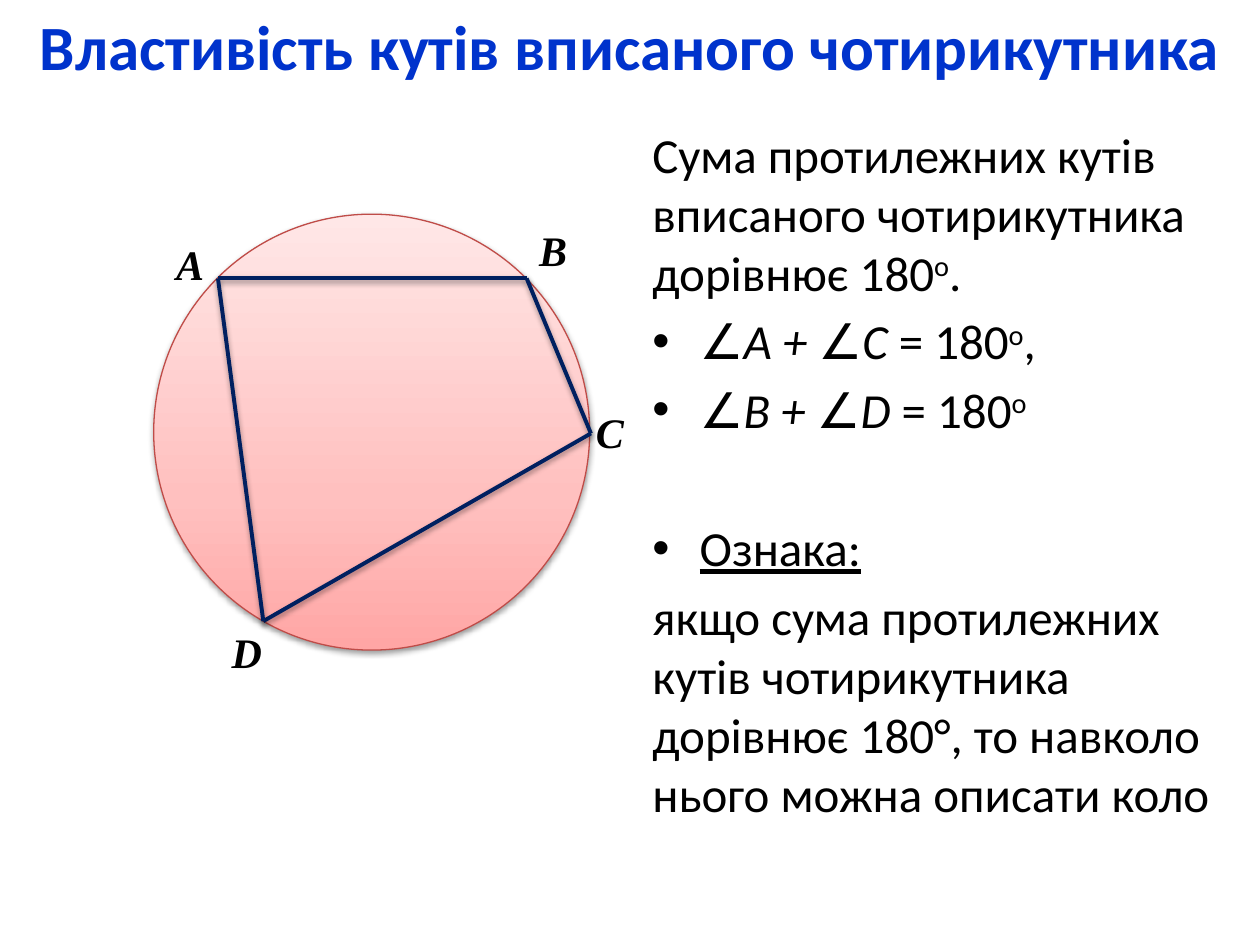
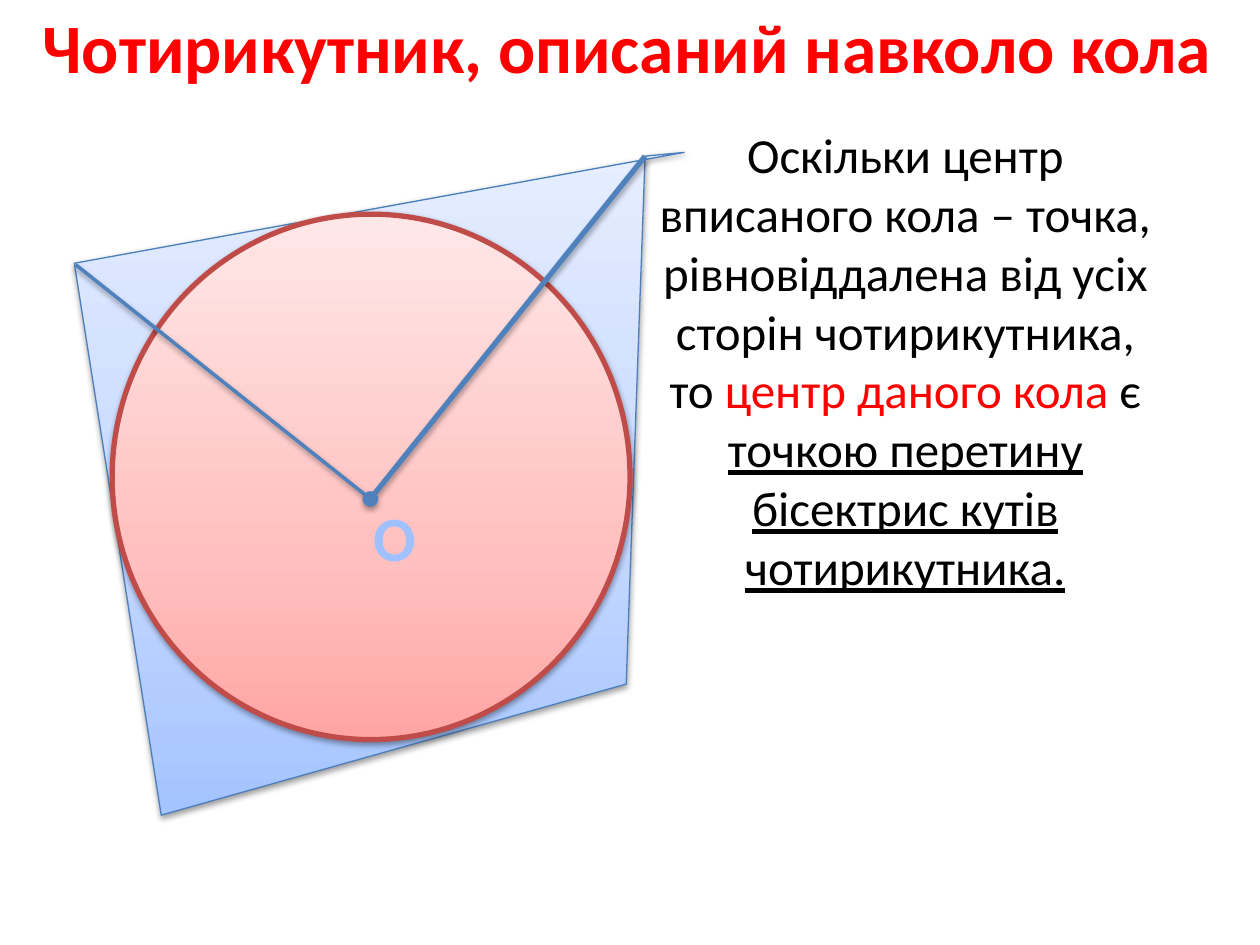
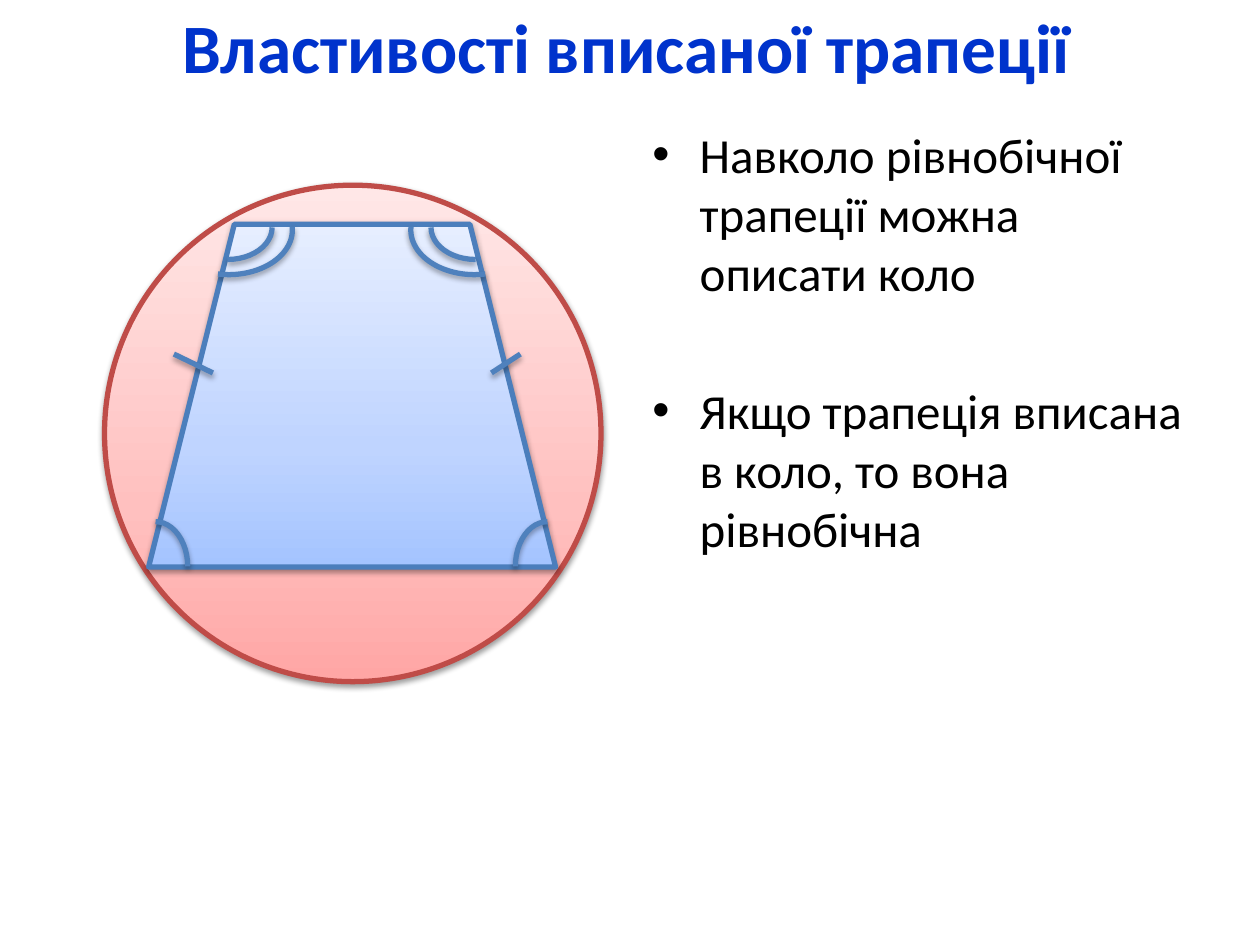
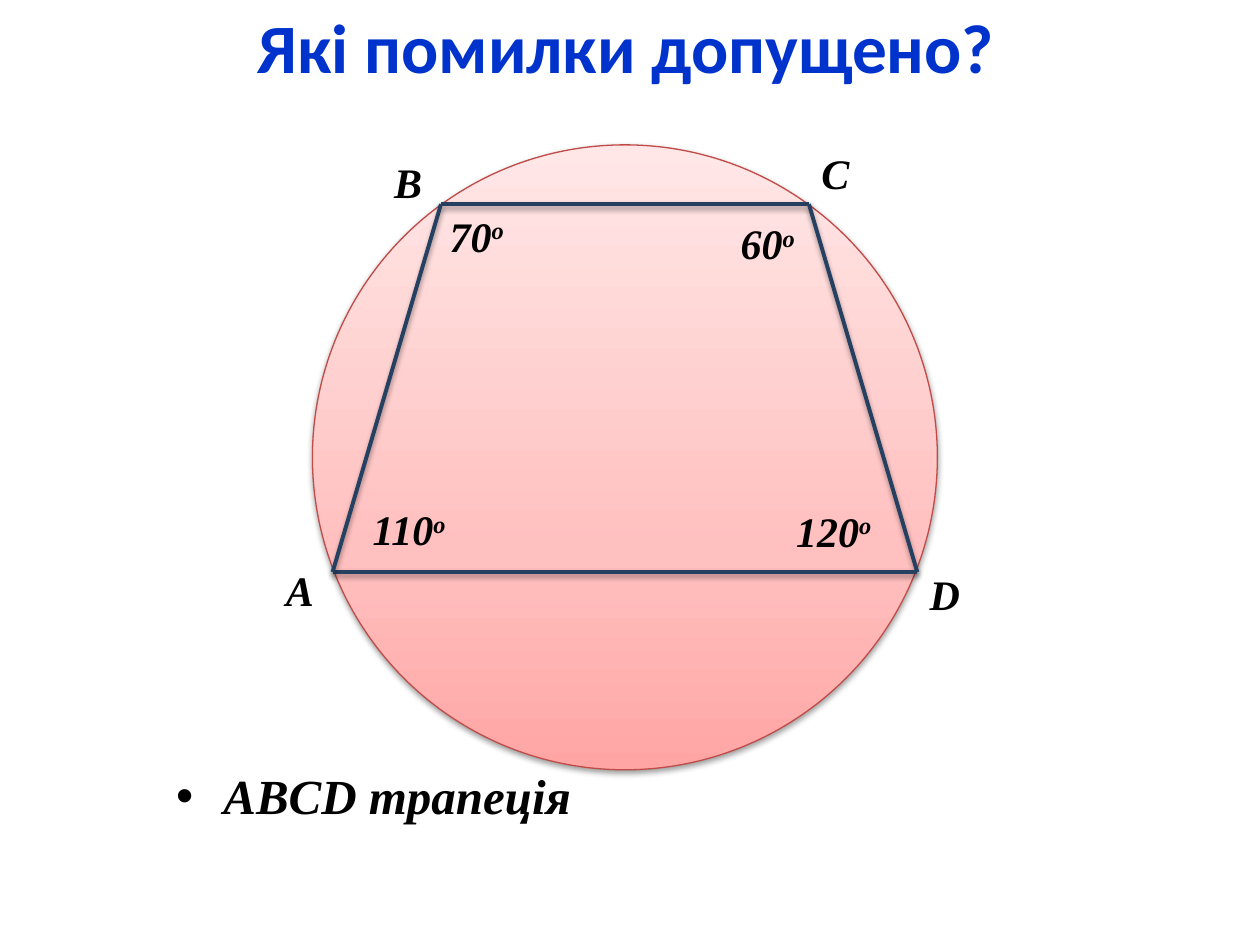
from dataclasses import dataclass

from pptx import Presentation, util as u
from pptx.dml.color import RGBColor
from pptx.enum import shapes, text
from pptx.oxml import parse_xml
from pptx.oxml.ns import nsdecls, qn

PX = 9144  # EMU in one px, 100 px to the inch


@dataclass(frozen=True)
class Theme:
    blue_title: str = "0033CC"
    red: str = "FF0000"
    ink: str = "000000"
    navy: str = "002060"
    slate: str = "254061"
    accent: str = "4F81BD"
    blue_edge: str = "4B7EBC"
    red_edge: str = "BF4C48"
    letter_edge: str = "467AB8"
    pink: tuple = ((0, "FFA6A5"), (35, "FFC0BF"), (100, "FFE7E7"))
    sky: tuple = ((0, "A4C4FF"), (35, "BFD4FF"), (100, "E6EEFF"))
    letter: tuple = ((0, "BFD3F9"), (9, "A0C1FF"), (50, "003D85"),
                     (79, "A0C1FF"), (100, "BFD3F9"))
    sans: str = "Calibri"
    serif: str = "Times New Roman"
    long_title_size: float = 36
    title_size: float = 39.6
    body_size: float = 28
    label_size: float = 24
    center_size: float = 36
    para_gap: float = 5.6
    section_gap: float = 45.4
    thin: float = 0.75
    medium: float = 2
    chord: float = 2.25
    thick: float = 3


THEME = Theme()
UNDERLINE = {"underline": True}
ITALIC = {"italic": True}
SUPER = {"raised": True}
SERIF = {"name": THEME.serif, "bold": True, "italic": True}


def px(*lengths):
    return [u.Emu(length * PX) for length in lengths]


def inside(box, left, top, *size):
    """Move a part, given from the corner of its box, onto the slide."""
    return (box[0] + left, box[1] + top, *size)


# ---- Paint ----

def gradient(stops, angle):
    marks = "".join(f'<a:gs pos="{at * 1000}"><a:srgbClr val="{color}"/></a:gs>'
                    for at, color in stops)
    return parse_xml(f'<a:gradFill {nsdecls("a")} rotWithShape="1"><a:gsLst>{marks}'
                     f'</a:gsLst><a:lin ang="{angle * 60000}" scaled="0"/></a:gradFill>')


def set_line(item, color, width):
    item.line.color.rgb = RGBColor.from_string(color)
    item.line.width = u.Pt(width)


def set_shadow(item, alpha=None, distance=20000):
    """Give a soft shadow below, or none when alpha is left out."""
    shadow = "" if alpha is None else (
        f'<a:outerShdw blurRad="40000" dist="{distance}" dir="5400000" rotWithShape="0">'
        f'<a:srgbClr val="{THEME.ink}"><a:alpha val="{alpha * 1000}"/></a:srgbClr>'
        '</a:outerShdw>')
    item._element.spPr.append(
        parse_xml(f'<a:effectLst {nsdecls("a")}>{shadow}</a:effectLst>'))


def paint(shape, stops, edge, width):
    shape._element.spPr.append(gradient(stops, 270))
    set_line(shape, edge, width)
    set_shadow(shape, 38)


def add_circle(page, box, width):
    circle = page.shapes.add_shape(shapes.MSO_SHAPE.OVAL, *px(*box))
    paint(circle, THEME.pink, THEME.red_edge, width)


def add_line(owner, box, start, end, color, width):
    line = owner.shapes.add_connector(
        shapes.MSO_CONNECTOR.STRAIGHT, *px(*inside(box, *start), *inside(box, *end)))
    set_line(line, color, width)
    return line


# ---- Text ----

def add_span(para, words, size, name=THEME.sans, color=THEME.ink, raised=False, **looks):
    span = para.add_run()
    span.text = words
    span.font.name, span.font.size = name, u.Pt(size)
    span.font.color.rgb = RGBColor.from_string(color)
    for look, value in looks.items():
        setattr(span.font, look, value)
    if raised:
        span._r.get_or_add_rPr().set("baseline", "30000")
    return span


def add_frame(page, box):
    frame = page.shapes.add_textbox(*px(*box)).text_frame
    frame.word_wrap = True
    return frame


def add_bullet(para):
    props = para._p.get_or_add_pPr()
    props.set("marL", "342900")
    props.set("indent", "-342900")
    props.append(parse_xml(f'<a:buFont {nsdecls("a")} typeface="Arial"/>'))
    props.append(parse_xml(f'<a:buChar {nsdecls("a")} char="•"/>'))


def add_title(page, box, words, size=THEME.title_size, color=THEME.blue_title):
    frame = add_frame(page, box)
    frame.vertical_anchor = text.MSO_ANCHOR.MIDDLE
    para = frame.paragraphs[0]
    para.alignment = text.PP_ALIGN.CENTER
    add_span(para, words, size, color=color, bold=True)


def add_body(page, box, paras, align=text.PP_ALIGN.LEFT):
    """Each paragraph is (bulleted, space before, [(words, looks), ...])."""
    frame = add_frame(page, box)
    for index, (bulleted, before, spans) in enumerate(paras):
        para = frame.add_paragraph() if index else frame.paragraphs[0]
        if bulleted:
            add_bullet(para)
        para.alignment = align
        para.space_before = u.Pt(before)
        for words, looks in spans:
            add_span(para, words, THEME.body_size, **looks)


def add_label(page, box, words, degrees=False):
    para = add_frame(page, box).paragraphs[0]
    add_span(para, words, THEME.label_size, **SERIF)
    if degrees:
        add_span(para, "o", THEME.label_size, raised=True, **SERIF)


# ---- Figures ----

def inscribed_figure(page, box, corners, color, labels, label_width, angles=()):
    """Circle with a closed run of chords, corner letters and angle values."""
    add_circle(page, box, THEME.thin)
    for start, end in zip(corners, corners[1:] + corners[:1]):
        add_line(page, box, start, end, color, THEME.chord)
    for words, left, top in labels:
        add_label(page, inside(box, left, top, label_width, 50), words)
    for words, left, top in angles:
        add_label(page, inside(box, left, top, 88, 50), words, degrees=True)


def circumscribed_figure(page, box):
    """Quadrilateral around a circle, with two bisectors meeting at the centre."""
    corners = [inside(box, *corner) for corner in
               ((484, 0), (0, 88), (69, 526), (438, 422), (453, 3))]
    builder = page.shapes.build_freeform(*corners[0], scale=PX)
    builder.add_line_segments(corners[1:], close=True)
    paint(builder.convert_to_shape(), THEME.sky, THEME.blue_edge, THEME.thin)
    add_circle(page, inside(box, 30, 49, 411, 417), THEME.thick)

    # Bisectors
    center = (235, 275)
    group = page.shapes.add_group_shape()
    short = add_line(group, box, (1, 89), center, THEME.accent, THEME.medium)
    set_shadow(short, 38)
    long = add_line(group, box, (453, 3), center, THEME.accent, THEME.thick)
    long.line._get_or_add_ln().append(parse_xml(f'<a:tailEnd {nsdecls("a")} type="oval"/>'))
    set_shadow(long, 35, 23000)

    # Centre letter with an outline and a gradient
    para = add_frame(page, inside(box, 228, 270, 36, 71)).paragraphs[0]
    para.alignment = text.PP_ALIGN.CENTER
    props = add_span(para, "О", THEME.center_size, bold=True)._r.get_or_add_rPr()
    props.replace(props.find(qn("a:solidFill")), gradient(THEME.letter, 90))
    props.insert(0, parse_xml(
        f'<a:ln {nsdecls("a")} w="10541"><a:solidFill>'
        f'<a:srgbClr val="{THEME.letter_edge}"/></a:solidFill></a:ln>'))


def add_arc(owner, box, turn=0, flipped=False, sweep=None):
    arc = owner.shapes.add_shape(shapes.MSO_SHAPE.ARC, *px(*box))
    if sweep:
        for index, degrees in enumerate(sweep):
            arc.adjustments[index] = degrees * 0.6
    arc.rotation = turn
    if flipped:
        arc._element.spPr.find(qn("a:xfrm")).set("flipH", "1")
    arc.fill.background()
    set_line(arc, THEME.accent, THEME.thick)
    set_shadow(arc, 35, 23000)


def trapezoid_figure(page, box):
    """Isosceles trapezoid in a circle, with marks of equal sides and angles."""
    add_circle(page, box, THEME.thick)
    trapezoid = page.shapes.add_shape(
        shapes.MSO_SHAPE.TRAPEZOID, *px(*inside(box, 35, 31, 323, 272)))
    paint(trapezoid, THEME.sky, THEME.blue_edge, THEME.thick)

    # Equal sides
    for start, end in (((55, 134), (86, 149)), ((330, 134), (307, 149))):
        tick = add_line(page, box, start, end, THEME.accent, THEME.thick)
        set_shadow(tick, 35, 23000)

    # Equal angles, mirrored about the axis of the trapezoid
    axis = 196

    def side(left, top, width, height, flipped):
        return inside(box, 2 * axis - left - width if flipped else left,
                      top, width, height)

    for flipped in (False, True):
        add_arc(page, side(15, 267, 51, 71, flipped), flipped=flipped)
    for flipped, turn in ((False, 90), (True, 270)):
        pair = page.shapes.add_group_shape()
        add_arc(pair, side(72, -2, 51, 71, flipped), turn, flipped)
        add_arc(pair, side(63, -15, 71, 101, flipped), turn, flipped, (267, 13.75))


# ---- Slides ----

def angle_property(page):
    add_title(page, (0, 0, 1000, 72), "Властивість кутів вписаного чотирикутника",
              THEME.long_title_size)
    add_body(page, (508, 94, 480, 576), [
        (False, 0, [("Сума протилежних кутів вписаного чотирикутника дорівнює 180", {}),
                    ("о", SUPER), (".", {})]),
        (True, THEME.para_gap, [("∠A + ∠C ", ITALIC), ("= 180", {}), ("o", SUPER), (",", {})]),
        (True, THEME.para_gap, [("∠B + ∠D ", ITALIC), ("= 180", {}), ("o", SUPER)]),
        (True, THEME.section_gap, [("Ознака:", UNDERLINE)]),
        (False, THEME.para_gap, [("якщо сума протилежних кутів чотирикутника дорівнює "
                                  "180°, то навколо нього можна описати коло", {})]),
    ])
    inscribed_figure(
        page, (122, 170, 346, 346), [(51, 51), (296, 51), (347, 174), (87, 323)], THEME.navy,
        [("А", 8, 14), ("В", 296, 3), ("С", 341, 148), ("D", 52, 322)], 31)


def circumscribed(page):
    add_title(page, (0, 0, 996, 72), "Чотирикутник, описаний навколо кола", color=THEME.red)
    add_body(page, (508, 94, 421, 576), [
        (False, 0, [("Оскільки центр вписаного кола – точка, рівновіддалена від усіх "
                     "сторін чотирикутника, то ", {}),
                    ("центр даного кола ", {"color": THEME.red}), ("є ", {}),
                    ("точкою перетину бісектрис кутів чотирикутника.", UNDERLINE)]),
    ], text.PP_ALIGN.CENTER)
    circumscribed_figure(page, (59, 121, 484, 526))


def inscribed_trapezoid(page):
    add_title(page, (47, 0, 900, 72), "Властивості вписаної трапеції")
    add_body(page, (508, 94, 441, 576), [
        (True, 0, [("Навколо рівнобічної трапеції можна описати коло", {})]),
        (True, THEME.section_gap,
         [("Якщо трапеція вписана в коло, то вона рівнобічна", {})]),
    ])
    trapezoid_figure(page, (83, 147, 394, 394))


def find_mistakes(page):
    add_title(page, (47, 0, 900, 72), "Які помилки допущено?")
    inscribed_figure(
        page, (248, 115, 496, 496), [(102, 47), (394, 47), (480, 339), (16, 339)], THEME.slate,
        [("А", -31, 328), ("В", 55, 4), ("С", 394, -3), ("D", 480, 331)], 47,
        [("110", 38, 280), ("70", 99, 47), ("120", 374, 281), ("60", 330, 53)])
    add_body(page, (130, 603, 819, 67), [(True, 0, [("ABCD трапеція", SERIF)])])


def main():
    deck = Presentation()
    deck.slide_width, deck.slide_height = px(1000, 750)
    for build in (angle_property, circumscribed, inscribed_trapezoid, find_mistakes):
        build(deck.slides.add_slide(deck.slide_layouts[6]))
    deck.save("out.pptx")


if __name__ == "__main__":
    main()
